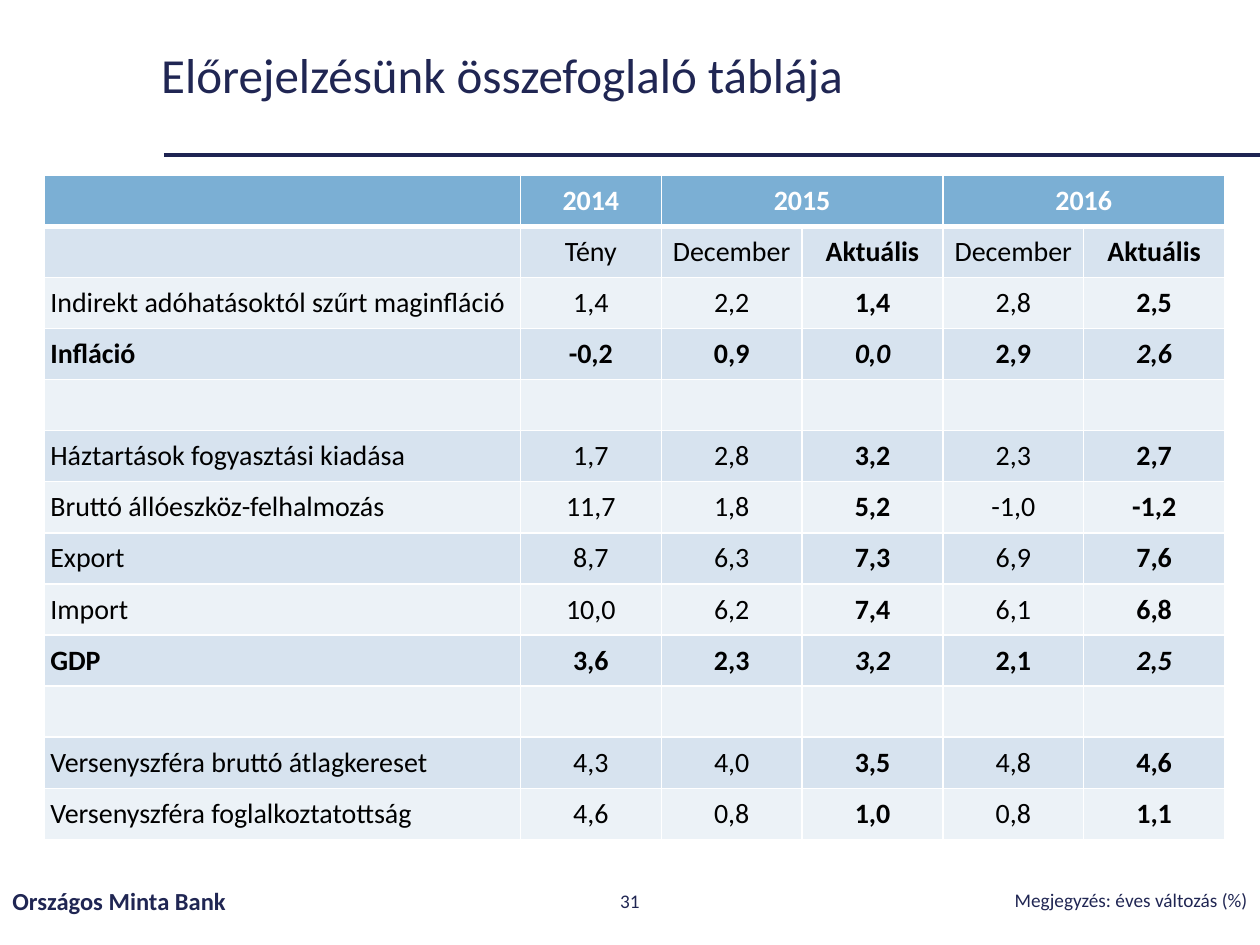
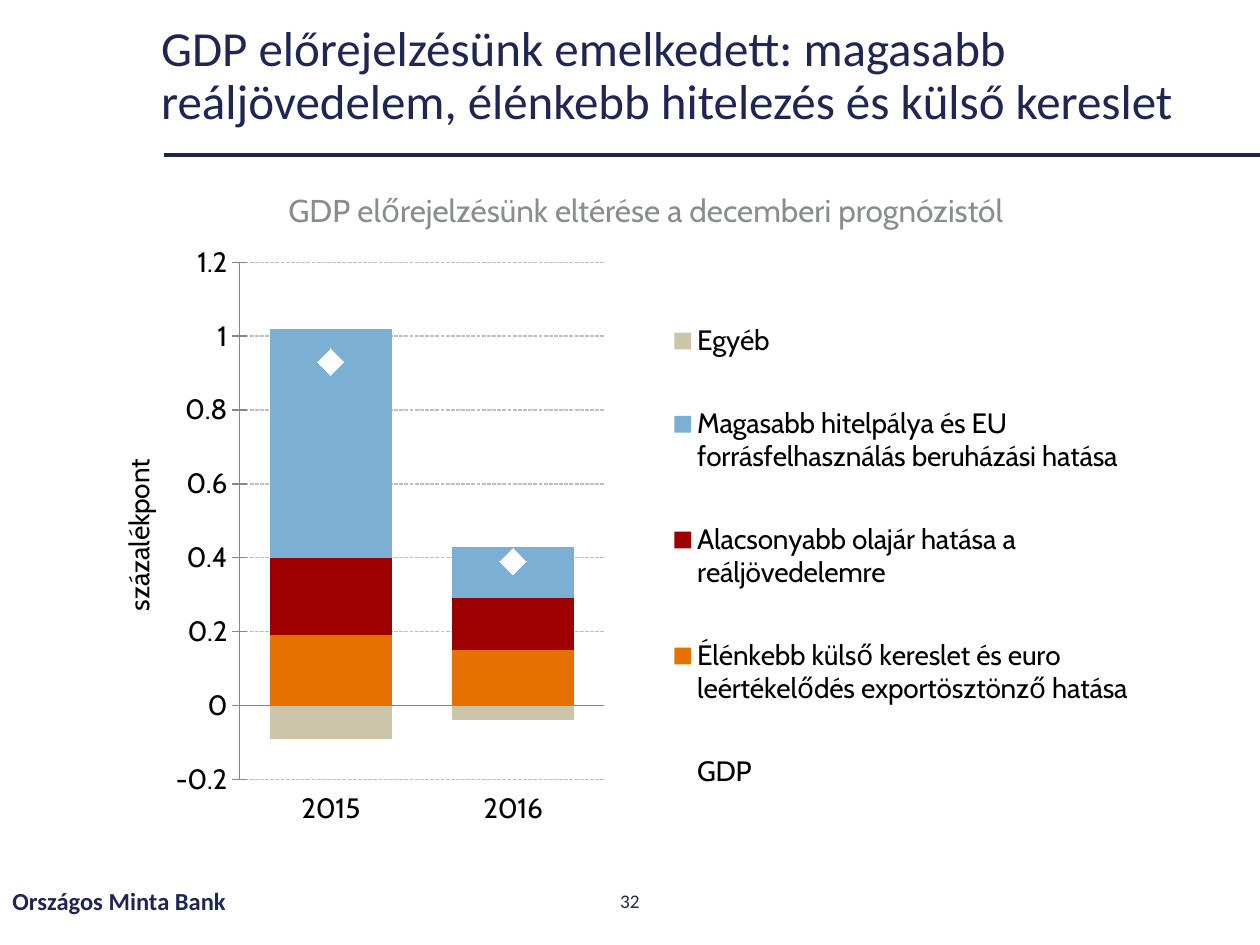
from dataclasses import dataclass

from lxml import etree
from pptx import Presentation
from pptx.chart.data import CategoryChartData
from pptx.dml.color import RGBColor
from pptx.enum.chart import (XL_CHART_TYPE, XL_LEGEND_POSITION, XL_MARKER_STYLE,
                             XL_TICK_LABEL_POSITION, XL_TICK_MARK)
from pptx.enum.dml import MSO_LINE
from pptx.enum.shapes import MSO_CONNECTOR
from pptx.enum.text import MSO_ANCHOR, PP_ALIGN
from pptx.oxml import parse_xml
from pptx.oxml.ns import nsdecls, qn
from pptx.util import Pt

LEFT, CENTER, RIGHT = PP_ALIGN.LEFT, PP_ALIGN.CENTER, PP_ALIGN.RIGHT
MIDDLE, TOP = MSO_ANCHOR.MIDDLE, MSO_ANCHOR.TOP

# Shared style
NAVY, RULE, BLUE, GREY = "202653", "1E2452", "7BAFD4", "898D8D"
BANDS = ("D7E3EF", "ECF2F7")
WHITE, BLACK = "FFFFFF", "000000"
BODY_FONT, CHART_FONT = "Calibri", "Cabin"
BANK = "Országos Minta Bank"
FOOTER_TOP, FOOTER_H = 500.4, 28.8


@dataclass
class Label:
    text: str
    left: float
    top: float
    width: float
    height: float
    size: float
    align: PP_ALIGN = LEFT
    bold: bool = False
    color: str = NAVY
    font: str = BODY_FONT
    anchor: MSO_ANCHOR = MIDDLE
    spacing: float = 1.0


@dataclass
class Series:
    name: str
    values: tuple
    color: str


# Forecast table
HEADER = ("", "2014", "2015", "", "2016", "")
ROWS = (
    ("", "Tény", "December", "Aktuális", "December", "Aktuális"),
    ("Indirekt adóhatásoktól szűrt maginfláció", "1,4", "2,2", "1,4", "2,8", "2,5"),
    ("Infláció", "-0,2", "0,9", "0,0", "2,9", "2,6"),
    ("",) * 6,
    ("Háztartások fogyasztási kiadása", "1,7", "2,8", "3,2", "2,3", "2,7"),
    ("Bruttó állóeszköz-felhalmozás", "11,7", "1,8", "5,2", "-1,0", "-1,2"),
    ("Export", "8,7", "6,3", "7,3", "6,9", "7,6"),
    ("Import", "10,0", "6,2", "7,4", "6,1", "6,8"),
    ("GDP", "3,6", "2,3", "3,2", "2,1", "2,5"),
    ("",) * 6,
    ("Versenyszféra bruttó átlagkereset", "4,3", "4,0", "3,5", "4,8", "4,6"),
    ("Versenyszféra foglalkoztatottság", "4,6", "0,8", "1,0", "0,8", "1,1"),
)
KEY_ROWS = ("Infláció", "GDP")
CURRENT_COLS = (3, 5)

# Contributions to the change of the GDP forecast
CONTRIBUTIONS = (
    Series("Élénkebb külső kereslet és euro leértékelődés exportösztönző hatása",
           (0.19, 0.15), "E57200"),
    Series("Alacsonyabb olajár hatása a reáljövedelemre", (0.21, 0.14), "9C0000"),
    Series("Magasabb hitelpálya és EU forrásfelhasználás beruházási hatása",
           (0.62, 0.14), BLUE),
    Series("Egyéb", (-0.09, -0.04), "CDC5A9"),
)
GDP = Series("GDP", (0.93, 0.39), WHITE)


def rgb(color: str) -> RGBColor:
    return RGBColor.from_string(color)


def set_font(font, size: float, color: str, name: str = BODY_FONT,
             bold: bool = False, italic: bool = False) -> None:
    font.size, font.name, font.bold, font.italic = Pt(size), name, bold, italic
    font.color.rgb = rgb(color)


def add_label(s, label: Label) -> None:
    sp = s.shapes.add_textbox(Pt(label.left), Pt(label.top),
                              Pt(label.width), Pt(label.height))
    tf = sp.text_frame
    tf.word_wrap = True
    tf.vertical_anchor = label.anchor
    p = tf.paragraphs[0]
    p.text, p.alignment, p.line_spacing = label.text, label.align, label.spacing
    set_font(p.font, label.size, label.color, label.font, label.bold)


def add_base_slide(prs, title: str, number: int, title_width: float):
    """Slide with title, rule below it and footer."""
    s = prs.slides.add_slide(prs.slide_layouts[6])
    rule = s.shapes.add_connector(MSO_CONNECTOR.STRAIGHT, Pt(93.6), Pt(88.4),
                                  Pt(720), Pt(88.4))
    rule.line.color.rgb = rgb(RULE)
    rule.line.width = Pt(2.25)
    etree.SubElement(rule._element.spPr, qn("a:effectLst"))
    for label in (
        Label(title, 85, 14.4, title_width, 59.8, 28, spacing=0.9),
        Label(BANK, 0, FOOTER_TOP, 243.4, FOOTER_H, 14, bold=True),
        Label(str(number), 279, FOOTER_TOP, 162, FOOTER_H, 11, CENTER),
    ):
        add_label(s, label)
    return s


def set_borders(cell, top: float, bottom: float) -> None:
    tc_pr = cell._tc.get_or_add_tcPr()
    for side, width in (("L", 1), ("R", 1), ("T", top), ("B", bottom)):
        tc_pr.append(parse_xml(
            f'<a:ln{side} {nsdecls("a")} w="{Pt(width)}"><a:solidFill>'
            f'<a:srgbClr val="{WHITE}"/></a:solidFill></a:ln{side}>'))


def add_forecast_table(s) -> None:
    grid = (HEADER, *ROWS)
    row_h = 29.2
    widths = (272.2,) + (80.5,) * 5
    table = s.shapes.add_table(len(grid), len(widths), Pt(25.2), Pt(100.1),
                               Pt(sum(widths)), Pt(row_h * len(grid))).table
    table.horz_banding = False
    for column, width in zip(table.columns, widths):
        column.width = Pt(width)
    for i, texts in enumerate(grid):
        table.rows[i].height = Pt(row_h)
        header, key = i == 0, texts[0] in KEY_ROWS
        for j, text in enumerate(texts):
            cell = table.cell(i, j)
            set_borders(cell, 3 if i == 1 else 1, 3 if header else 1)
            cell.fill.solid()
            cell.fill.fore_color.rgb = rgb(BLUE if header else BANDS[(i - 1) % 2])
            cell.vertical_anchor = MIDDLE
            cell.margin_left = cell.margin_right = Pt(3.6)
            cell.margin_top = cell.margin_bottom = Pt(3.6)
            p = cell.text_frame.paragraphs[0]
            p.text, p.alignment = text, CENTER if j else LEFT
            current = j in CURRENT_COLS
            set_font(p.font, 16, WHITE if header else BLACK,
                     bold=header or key or current, italic=key and current)
    for j in (2, 4):
        table.cell(0, j).merge(table.cell(0, j + 1))


def set_layout(parent, before: str, x: float, y: float, w: float, h: float,
               inner: bool = False) -> None:
    """Place a chart part by fractions of the chart area."""
    for old in parent.findall(qn("c:layout")):
        parent.remove(old)
    target = '<c:layoutTarget val="inner"/>' if inner else ""
    layout = parse_xml(
        f'<c:layout {nsdecls("c")}><c:manualLayout>{target}'
        '<c:xMode val="edge"/><c:yMode val="edge"/>'
        f'<c:x val="{x}"/><c:y val="{y}"/><c:w val="{w}"/><c:h val="{h}"/>'
        '</c:manualLayout></c:layout>')
    parent.find(qn(before)).addprevious(layout)


def move_last_series_to_line(chart) -> None:
    bars = chart.plots[0]._element
    ser = bars.findall(qn("c:ser"))[-1]
    for invert in ser.findall(qn("c:invertIfNegative")):
        ser.remove(invert)
    line = parse_xml(f'<c:lineChart {nsdecls("c")}><c:grouping val="standard"/>'
                     '<c:varyColors val="0"/><c:marker val="1"/></c:lineChart>')
    line.find(qn("c:marker")).addprevious(ser)
    for axis in bars.findall(qn("c:axId")):
        etree.SubElement(line, qn("c:axId")).set("val", axis.get("val"))
    bars.addnext(line)


def style_axes(chart) -> None:
    cat, val = chart.category_axis, chart.value_axis
    cat.tick_label_position = XL_TICK_LABEL_POSITION.LOW
    cat.major_tick_mark = XL_TICK_MARK.NONE
    val.major_tick_mark = XL_TICK_MARK.CROSS
    val.minimum_scale, val.maximum_scale, val.major_unit = -0.2, 1.2, 0.2
    val.tick_labels.number_format = "General"
    val.tick_labels.number_format_is_linked = False
    for axis in (cat, val):
        axis.format.line.color.rgb = rgb("868686")
        axis.format.line.width = Pt(0.75)
    grid = val.major_gridlines.format.line
    grid.color.rgb = rgb("BFBFBF")
    grid.width = Pt(0.75)
    grid.dash_style = MSO_LINE.SQUARE_DOT
    tf = val.axis_title.text_frame
    tf.text = "százalékpont"
    set_font(tf.paragraphs[0].font, 16, BLACK, CHART_FONT)
    body = tf._txBody.find(qn("a:bodyPr"))
    body.set("rot", "-5400000")
    body.set("vert", "horz")


def add_gdp_chart(s) -> None:
    data = CategoryChartData()
    data.categories = ("2015", "2016")
    for series in (*CONTRIBUTIONS, GDP):
        data.add_series(series.name, series.values)
    chart = s.shapes.add_chart(XL_CHART_TYPE.COLUMN_STACKED, Pt(65.5), Pt(139.7),
                               Pt(595.4), Pt(339.8), data).chart
    chart.has_title = False
    set_font(chart.font, 16, BLACK, CHART_FONT)
    move_last_series_to_line(chart)

    # Stacked columns
    bars, line = chart.plots
    bars.gap_width, bars.overlap = 50, 100
    bars.vary_by_categories = False
    for ser, series in zip(bars.series, CONTRIBUTIONS):
        ser.invert_if_negative = False
        ser.format.fill.solid()
        ser.format.fill.fore_color.rgb = rgb(series.color)

    # GDP as markers only
    gdp = line.series[0]
    gdp.smooth = False
    gdp.format.line.fill.background()
    gdp.marker.style, gdp.marker.size = XL_MARKER_STYLE.DIAMOND, 15
    gdp.marker.format.fill.solid()
    gdp.marker.format.fill.fore_color.rgb = rgb(GDP.color)
    gdp.marker.format.line.fill.background()

    style_axes(chart)
    chart.has_legend = True
    chart.legend.position = XL_LEGEND_POSITION.RIGHT
    chart.legend.include_in_layout = False
    set_layout(chart.legend._element, "c:overlay", 0.52, 0.05, 0.47, 0.95)
    plot_area = chart._chartSpace.chart.plotArea
    set_layout(plot_area, "c:barChart", 0.12, 0.03, 0.35, 0.87, inner=True)


def main() -> None:
    prs = Presentation()
    prs.slide_width, prs.slide_height = Pt(720), Pt(540)

    # Summary table
    s = add_base_slide(prs, "Előrejelzésünk összefoglaló táblája", 31, 589.7)
    add_label(s, Label("Megjegyzés: éves változás (%)", 553, FOOTER_TOP, 167,
                       FOOTER_H, 11, RIGHT, spacing=0.9))
    add_forecast_table(s)

    # GDP forecast chart
    s = add_base_slide(prs, "GDP előrejelzésünk emelkedett: magasabb reáljövedelem, "
                            "élénkebb hitelezés és külső kereslet", 32, 635)
    add_label(s, Label("GDP előrejelzésünk eltérése a decemberi prognózistól",
                       65.5, 105.8, 607, 28.8, 18, CENTER, color=GREY,
                       font=CHART_FONT, anchor=TOP))
    add_gdp_chart(s)
    prs.save("out.pptx")


if __name__ == "__main__":
    main()
